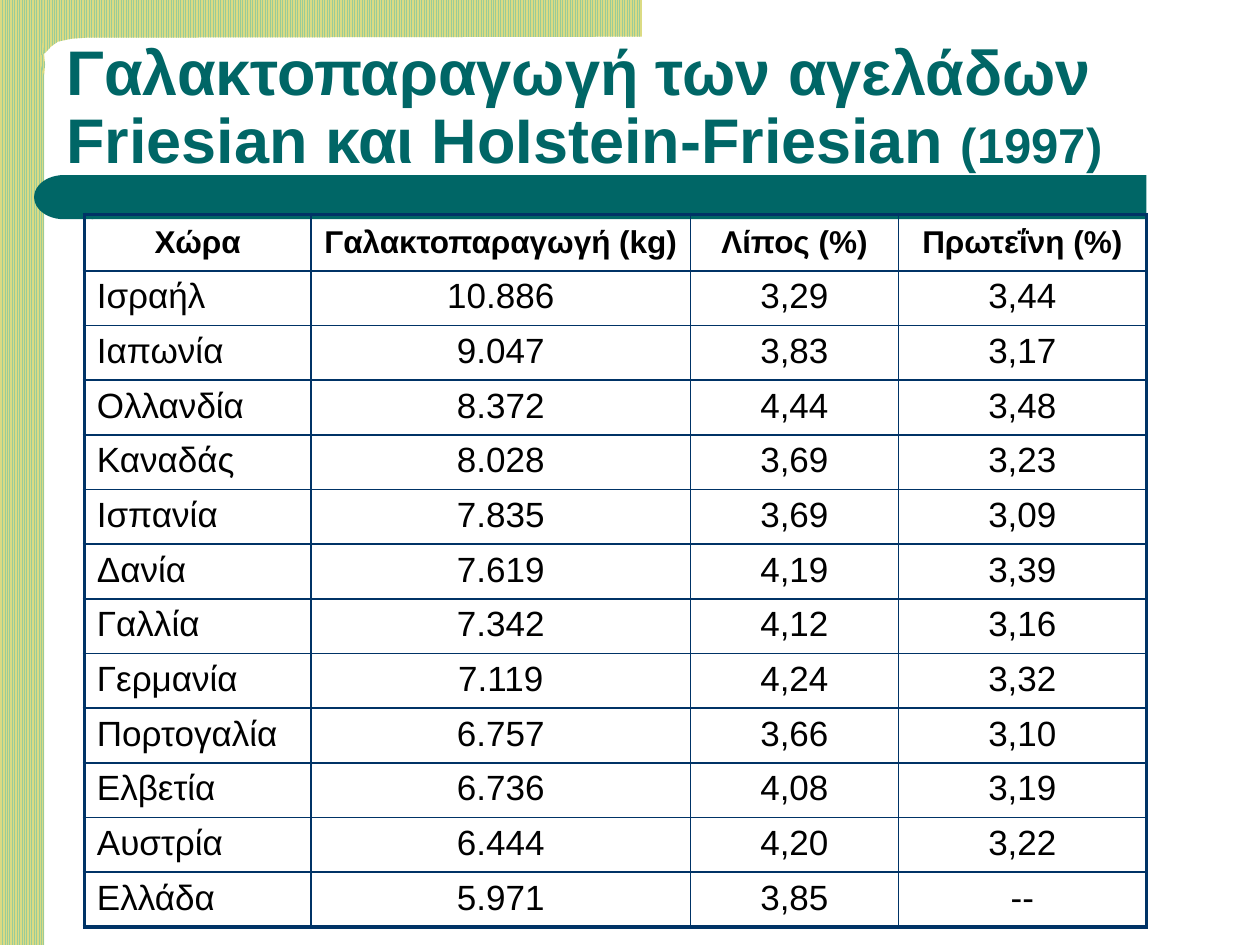
"""Build a slide with a table of milk yield of Friesian cows by country."""
from lxml import etree
from pptx import Presentation
from pptx.dml.color import RGBColor
from pptx.enum.dml import MSO_PATTERN
from pptx.enum.shapes import MSO_SHAPE
from pptx.enum.text import MSO_ANCHOR, PP_ALIGN
from pptx.oxml.ns import qn
from pptx.util import Cm, Pt

STRIPES = MSO_PATTERN.LIGHT_VERTICAL
RECTANGLE, DELAY = MSO_SHAPE.RECTANGLE, MSO_SHAPE.FLOWCHART_DELAY
ROUNDED = MSO_SHAPE.ROUNDED_RECTANGLE
MIDDLE, TOP, BOTTOM = MSO_ANCHOR.MIDDLE, MSO_ANCHOR.TOP, MSO_ANCHOR.BOTTOM
LEFT, CENTER = PP_ALIGN.LEFT, PP_ALIGN.CENTER
TEAL, NAVY, BLACK = "006666", "003366", "000000"
GREEN, SAND = "99CC99", "DBDB83"

HEADER = ["Χώρα", "Γαλακτοπαραγωγή (kg)", "Λίπος (%)", "Πρωτεΐνη (%)"]
COUNTRIES = [
    ["Ισραήλ", "10.886", "3,29", "3,44"],
    ["Ιαπωνία", "9.047", "3,83", "3,17"],
    ["Ολλανδία", "8.372", "4,44", "3,48"],
    ["Καναδάς", "8.028", "3,69", "3,23"],
    ["Ισπανία", "7.835", "3,69", "3,09"],
    ["Δανία", "7.619", "4,19", "3,39"],
    ["Γαλλία", "7.342", "4,12", "3,16"],
    ["Γερμανία", "7.119", "4,24", "3,32"],
    ["Πορτογαλία", "6.757", "3,66", "3,10"],
    ["Ελβετία", "6.736", "4,08", "3,19"],
    ["Αυστρία", "6.444", "4,20", "3,22"],
    ["Ελλάδα", "5.971", "3,85", "--"],
]
COLUMN_WIDTHS = [4.57, 7.65, 4.19, 5]
HEADER_HEIGHT, ROW_HEIGHT = 1.14, 1.04
CORNER = [(1295, 74), (239, 76), (175, 76), (145, 78), (117, 84), (103, 94),
          (91, 107), (82, 112), (79, 119), (89, 152), (91, 130), (86, 84), (86, 0)]


def color(value):
    return RGBColor.from_string(value)


def add_span(para, text, formats):
    span = para.add_run()
    span.text = text
    span.font.color.rgb = color(formats["color"])
    for name in ("name", "size", "bold"):
        setattr(span.font, name, formats[name])


deck = Presentation()
deck.slide_width, deck.slide_height = Cm(25.4), Cm(19.05)
page = deck.slides.add_slide(deck.slide_layouts[6])

side_band = page.shapes.add_shape(RECTANGLE, 0, 0, Cm(0.89), Cm(19.05))
builder = page.shapes.build_freeform(1295, -5, scale=Cm(0.01))
builder.add_line_segments(CORNER, close=True)
top_band = builder.convert_to_shape()
for band in (side_band, top_band):
    band.shadow.inherit = False
    band.line.fill.background()
    band.fill.patterned()
    band.fill.pattern = STRIPES
    band.fill.fore_color.rgb = color(GREEN)
    band.fill.back_color.rgb = color(SAND)

bar = page.shapes.add_shape(ROUNDED, Cm(1.85), Cm(3.53), Cm(21.26), Cm(0.89))
bar.adjustments[0] = 0
bar_end = page.shapes.add_shape(DELAY, Cm(0.69), Cm(3.53), Cm(1.19), Cm(0.89))
bar_end.element.spPr.xfrm.set("flipH", "1")
for part in (bar, bar_end):
    part.shadow.inherit = False
    part.line.fill.background()
    part.fill.solid()
    part.fill.fore_color.rgb = color(TEAL)

title = page.shapes.add_textbox(Cm(1.09), Cm(1.02), Cm(22.02), Cm(2.67))
title.text_frame.word_wrap = True
title.text_frame.vertical_anchor = BOTTOM
para = title.text_frame.paragraphs[0]
para.line_spacing = 0.9
title_format = {"name": "Arial", "size": Pt(36), "bold": True, "color": TEAL}
add_span(para, "Γαλακτοπαραγωγή των αγελάδων Friesian και HoIstein-Friesian ", title_format)
add_span(para, "(1997)", {**title_format, "size": Pt(28)})

rows = [HEADER, *COUNTRIES]
last_row, last_column = len(rows) - 1, len(HEADER) - 1
table_height = HEADER_HEIGHT + ROW_HEIGHT * len(COUNTRIES)
table = page.shapes.add_table(len(rows), len(HEADER), Cm(1.7), Cm(4.32),
                              Cm(sum(COLUMN_WIDTHS)), Cm(table_height)).table
table.first_row = table.horz_banding = False
for column, width in zip(table.columns, COLUMN_WIDTHS):
    column.width = Cm(width)

header_format = {"name": "Arial", "size": Pt(18), "bold": True, "color": BLACK}
body_format = {**header_format, "size": Pt(20), "bold": False}
for r, values in enumerate(rows):
    is_header = r == 0
    table.rows[r].height = Cm(HEADER_HEIGHT if is_header else ROW_HEIGHT)
    for c, value in enumerate(values):
        cell = table.cell(r, c)
        cell.vertical_anchor = MIDDLE if is_header else TOP
        para = cell.text_frame.paragraphs[0]
        para.alignment = CENTER if is_header or c > 0 else LEFT
        add_span(para, value, header_format if is_header else body_format)
        outer_edges = {"lnL": c == 0, "lnR": c == last_column,
                       "lnT": is_header, "lnB": r == last_row}
        properties = cell._tc.get_or_add_tcPr()
        for edge, is_outer in outer_edges.items():
            border = etree.SubElement(properties, qn(f"a:{edge}"),
                                      w=str(Pt(2.25 if is_outer else 1)))
            fill = etree.SubElement(border, qn("a:solidFill"))
            etree.SubElement(fill, qn("a:srgbClr"), val=NAVY)
        cell.fill.background()

deck.save("out.pptx")
